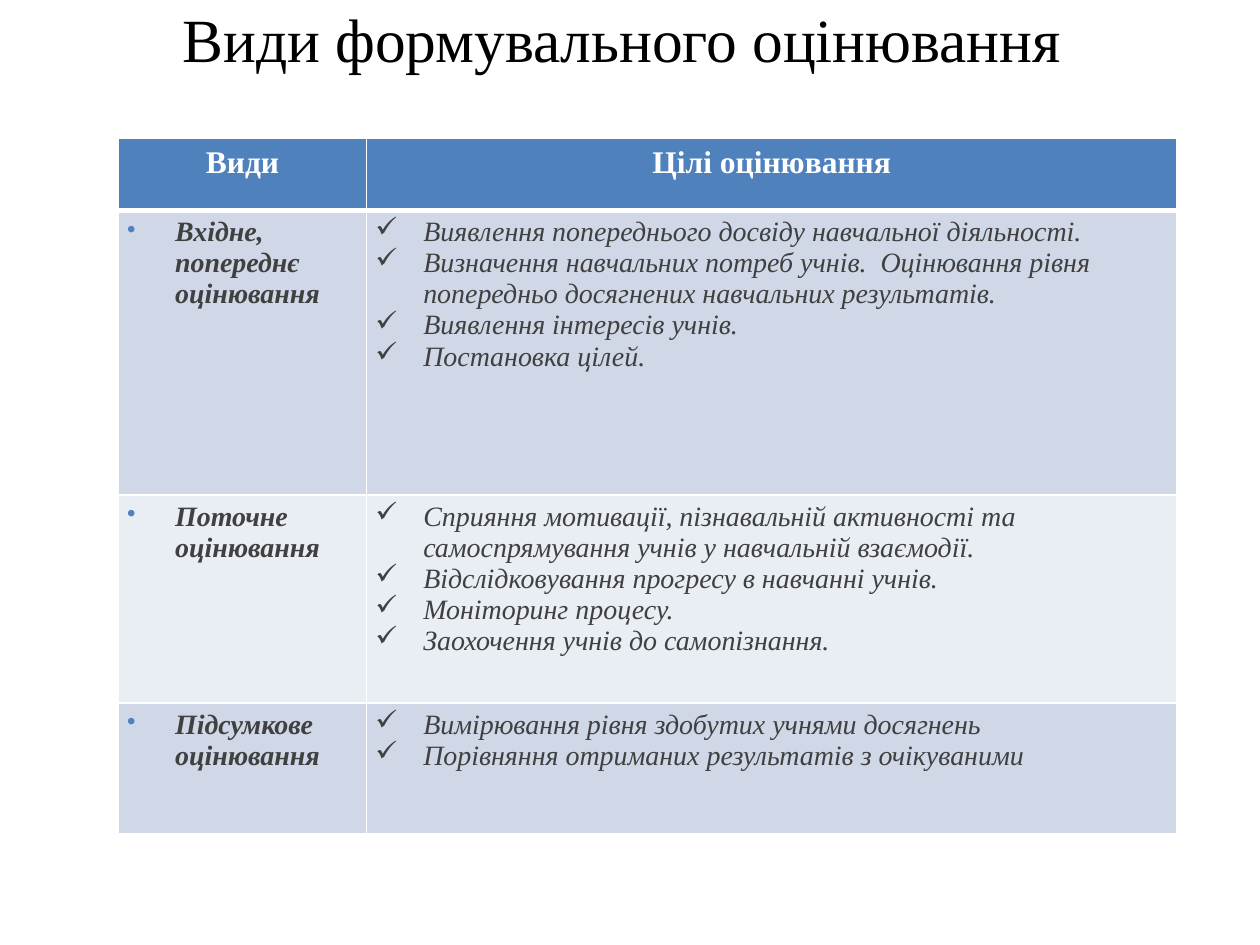
from dataclasses import dataclass
from typing import Optional

from lxml.etree import SubElement
from pptx import Presentation
from pptx.dml.color import RGBColor
from pptx.enum.text import MSO_ANCHOR as Anchor, PP_ALIGN as Align
from pptx.oxml.ns import qn
from pptx.util import Emu, Inches, Pt

FONT = "Times New Roman"
BLACK = RGBColor(0x00, 0x00, 0x00)
WHITE = RGBColor(0xFF, 0xFF, 0xFF)
BLUE = RGBColor(0x4F, 0x81, 0xBD)
GREY = RGBColor(0x40, 0x40, 0x40)
BAND_DARK = RGBColor(0xD0, 0xD8, 0xE8)
BAND_LIGHT = RGBColor(0xE9, 0xED, 0xF4)

SLIDE_WIDTH, SLIDE_HEIGHT = Inches(10), Inches(7.5)
TABLE_LEFT, TABLE_TOP = Inches(0.94), Inches(1.1)
COLUMN_WIDTHS = (Inches(1.97), Inches(6.43))
HEADER_HEIGHT = Inches(0.57)
INDENT = Inches(0.38)


@dataclass(frozen=True)
class TextStyle:
    size: float
    color: RGBColor
    bold: bool = False
    italic: bool = False


@dataclass(frozen=True)
class Bullet:
    mark: str
    color: Optional[RGBColor] = None
    percent: int = 100


@dataclass(frozen=True)
class Assessment:
    kind: str
    goals: tuple[str, ...]
    height: float


TITLE_STYLE = TextStyle(35.1, BLACK)
HEADER_STYLE = TextStyle(18, WHITE, bold=True)
KIND_STYLE = TextStyle(16, GREY, bold=True, italic=True)
GOAL_STYLE = TextStyle(16, GREY, italic=True)
DOT = Bullet("•", BLUE, 90)
CHECK = Bullet("✓")

HEADERS = ("Види", "Цілі оцінювання")
ASSESSMENTS = (
    Assessment("Вхідне, попереднє оцінювання", (
        "Виявлення попереднього досвіду навчальної діяльності.",
        "Визначення навчальних потреб учнів.  Оцінювання рівня попередньо досягнених навчальних результатів.",
        "Виявлення інтересів учнів.",
        "Постановка цілей.",
    ), 2.26),
    Assessment("Поточне оцінювання", (
        "Сприяння мотивації, пізнавальній активності та самоспрямування учнів у навчальній взаємодії.",
        "Відслідковування прогресу в навчанні учнів.",
        "Моніторинг процесу.",
        "Заохочення учнів до самопізнання.",
    ), 1.65),
    Assessment("Підсумкове оцінювання", (
        "Вимірювання рівня здобутих учнями досягнень",
        "Порівняння отриманих результатів з очікуваними",
    ), 1.04),
)


def add_bullet(paragraph, bullet: Bullet) -> None:
    """Give a paragraph a hanging indent and a bullet mark."""
    properties = paragraph._p.get_or_add_pPr()
    properties.set("marL", str(INDENT))
    properties.set("indent", str(-INDENT))
    if bullet.color is not None:
        color = SubElement(properties, qn("a:buClr"))
        SubElement(color, qn("a:srgbClr"), val=str(bullet.color))
    SubElement(properties, qn("a:buSzPct"), val=str(bullet.percent * 1000))
    SubElement(properties, qn("a:buChar"), char=bullet.mark)


def write_lines(frame, lines: tuple[str, ...], style: TextStyle,
                bullet: Optional[Bullet] = None) -> None:
    """Write one paragraph per line, centred unless bulleted."""
    for index, line in enumerate(lines):
        paragraph = frame.add_paragraph() if index else frame.paragraphs[0]
        paragraph.alignment = Align.LEFT if bullet else Align.CENTER
        if bullet:
            add_bullet(paragraph, bullet)
        run = paragraph.add_run()
        run.text = line
        run.font.name = FONT
        run.font.size = Pt(style.size)
        run.font.bold = style.bold
        run.font.italic = style.italic
        run.font.color.rgb = style.color


def format_cell(cell, fill: RGBColor, top: float = 1, bottom: float = 1) -> None:
    """Set the margins, white borders and fill of a cell."""
    cell.margin_left = cell.margin_right = Inches(0.07)
    cell.margin_top = cell.margin_bottom = Inches(0.05)
    properties = cell._tc.get_or_add_tcPr()
    for side, width in (("L", 1), ("R", 1), ("T", top), ("B", bottom)):
        line = SubElement(properties, qn(f"a:ln{side}"), w=str(Pt(width)))
        solid = SubElement(line, qn("a:solidFill"))
        SubElement(solid, qn("a:srgbClr"), val=str(WHITE))
    cell.fill.solid()
    cell.fill.fore_color.rgb = fill


def add_title(slide, text: str) -> None:
    """Add the slide heading."""
    box = slide.shapes.add_textbox(Inches(0.37), Inches(-0.03), Inches(9.13), Inches(0.67))
    frame = box.text_frame
    frame.word_wrap = True
    frame.vertical_anchor = Anchor.MIDDLE
    write_lines(frame, (text,), TITLE_STYLE)


def add_assessment_table(slide) -> None:
    """Add the table of assessment kinds and their goals."""
    heights = (HEADER_HEIGHT, *(Inches(item.height) for item in ASSESSMENTS))
    table = slide.shapes.add_table(
        len(heights), len(COLUMN_WIDTHS), TABLE_LEFT, TABLE_TOP,
        Emu(sum(COLUMN_WIDTHS)), Emu(sum(heights))).table
    table.horz_banding = False
    for column, width in zip(table.columns, COLUMN_WIDTHS):
        column.width = width
    for row, height in zip(table.rows, heights):
        row.height = height
    for index, header in enumerate(HEADERS):
        cell = table.cell(0, index)
        format_cell(cell, BLUE, bottom=3)
        write_lines(cell.text_frame, (header,), HEADER_STYLE)
    for row_index, item in enumerate(ASSESSMENTS, start=1):
        kind_cell, goal_cell = table.rows[row_index].cells
        fill = BAND_DARK if row_index % 2 else BAND_LIGHT
        for cell in (kind_cell, goal_cell):
            format_cell(cell, fill, top=3 if row_index == 1 else 1)
        write_lines(kind_cell.text_frame, (item.kind,), KIND_STYLE, DOT)
        write_lines(goal_cell.text_frame, item.goals, GOAL_STYLE, CHECK)


def main() -> None:
    """Build and save the presentation."""
    presentation = Presentation()
    presentation.slide_width, presentation.slide_height = SLIDE_WIDTH, SLIDE_HEIGHT
    slide = presentation.slides.add_slide(presentation.slide_layouts[6])
    add_title(slide, "Види формувального оцінювання")
    add_assessment_table(slide)
    presentation.save("out.pptx")


if __name__ == "__main__":
    main()
